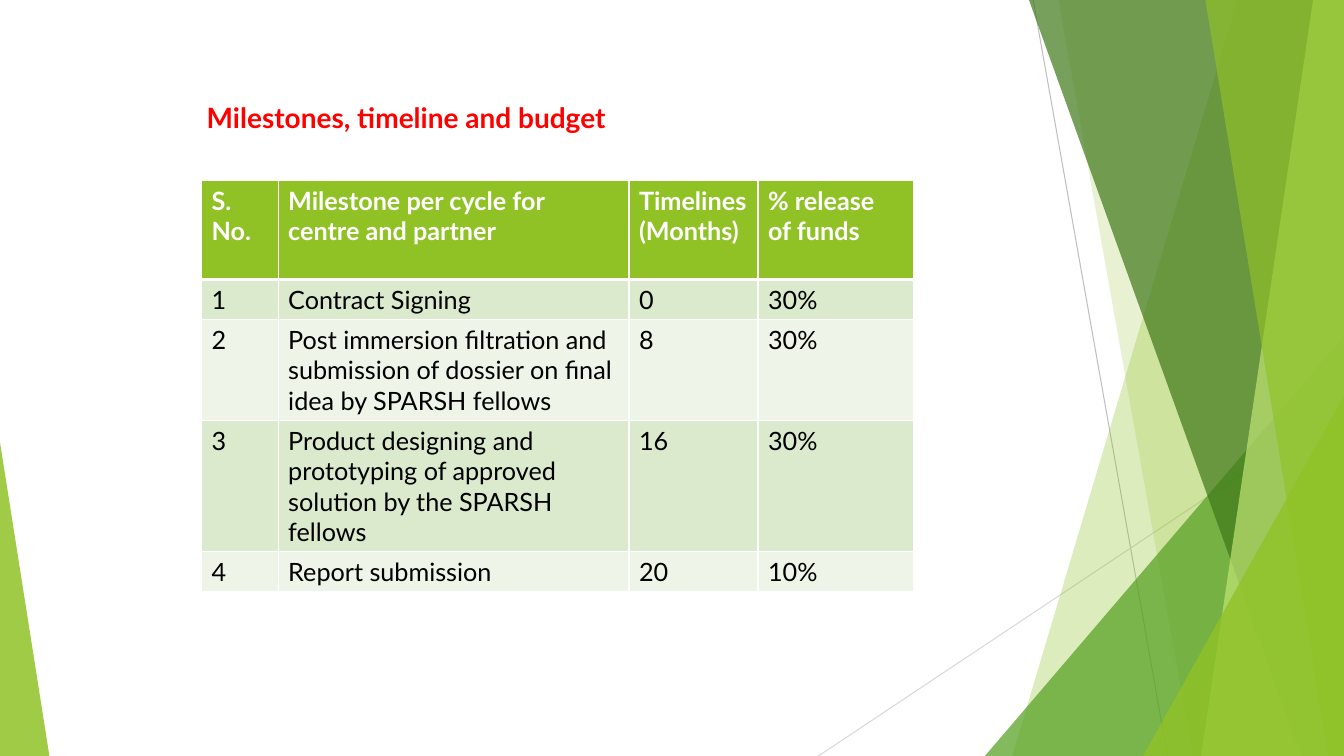
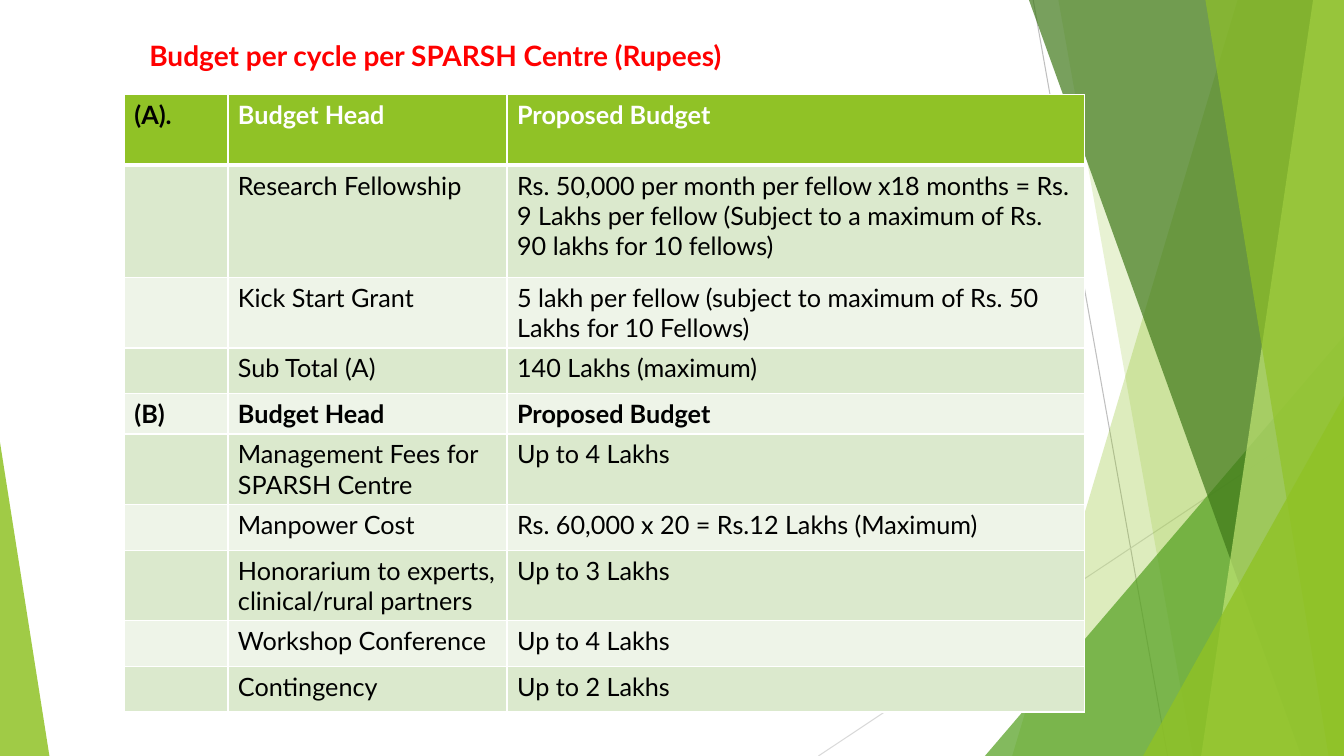
from dataclasses import dataclass

from lxml.etree import SubElement
from pptx import Presentation
from pptx.dml.color import RGBColor
from pptx.enum.shapes import MSO_CONNECTOR as Connector, MSO_SHAPE as Preset
from pptx.enum.text import MSO_ANCHOR as Anchor, MSO_AUTO_SIZE as AutoSize, PP_ALIGN as Align
from pptx.oxml.ns import qn
from pptx.util import Pt


@dataclass(frozen=True)
class Theme:
    font: str = "Lato"
    title_size: int = 20
    table_size: int = 18
    title: str = "FF0000"
    text: str = "000000"
    white: str = "FFFFFF"
    lime: str = "90C226"
    pale_lime: str = "C0E474"
    green: str = "54A021"
    dark_green: str = "3F7819"
    odd_row: str = "DBE9CD"
    even_row: str = "EEF4E8"
    steep_line: str = "BFBFBF"
    flat_line: str = "D9D9D9"


THEME = Theme()
WIDTH, HEIGHT = 960, 540
TITLE_HEIGHT = 31.7
BORDER, HEADER_BORDER = 1, 3
# Heights of table rows that hold one to four lines of text
ONE_LINE, TWO_LINES, THREE_LINES, FOUR_LINES = (7.2 + 21.6 * lines for lines in range(1, 5))
LOOSE_LINE = 32.6

MILESTONES = [
    ("S. No.", "Milestone per cycle for centre and partner", "Timelines (Months)", "% release of funds"),
    ("1", "Contract Signing", "0", "30%"),
    ("2", "Post immersion filtration and submission of dossier on final idea by SPARSH fellows", "8", "30%"),
    ("3", "Product designing and prototyping of approved solution by the SPARSH fellows", "16", "30%"),
    ("4", "Report submission", "20", "10%"),
]
BUDGET = [
    ("(A).", "Budget Head", "Proposed Budget"),
    ("", "Research Fellowship",
     "Rs. 50,000 per month per fellow x18 months = Rs. 9 Lakhs per fellow "
     "(Subject to a maximum of Rs. 90 lakhs for 10 fellows)"),
    ("", "Kick Start Grant", "5 lakh per fellow (subject to maximum of Rs. 50 Lakhs for 10 Fellows)"),
    ("", "Sub Total (A)", "140 Lakhs (maximum)"),
    ("(B)", "Budget Head", "Proposed Budget"),
    ("", "Management Fees for SPARSH Centre", "Up to 4 Lakhs"),
    ("", "Manpower Cost", "Rs. 60,000 x 20 = Rs.12 Lakhs (Maximum)"),
    ("", "Honorarium to experts, clinical/rural partners", "Up to 3 Lakhs"),
    ("", "Workshop Conference", "Up to 4 Lakhs"),
    ("", "Contingency", "Up to 2 Lakhs"),
]


def rgb(color):
    return RGBColor.from_string(color)


def format_text(text_frame, size, color, bold):
    for paragraph in text_frame.paragraphs:
        for run in paragraph.runs:
            run.font.name = THEME.font
            run.font.size = Pt(size)
            run.font.bold = bold
            run.font.color.rgb = rgb(color)


def fill_translucent(shape, color, opacity):
    shape.shadow.inherit = False
    shape.line.fill.background()
    shape.fill.solid()
    shape.fill.fore_color.rgb = rgb(color)
    color_element = shape.element.spPr.find(".//" + qn("a:srgbClr"))
    SubElement(color_element, qn("a:alpha"), val=str(opacity * 1000))


def add_line(shapes, start, end, color):
    ends = [Pt(length) for length in (*start, *end)]
    line = shapes.add_connector(Connector.STRAIGHT, *ends)
    line.line.color.rgb = rgb(color)
    line.line.width = Pt(0.75)
    SubElement(line.element.spPr, qn("a:effectLst"))


def add_wedge(shapes, top_left, bottom_left, color, opacity):
    """Add a full-height band with a slanted left edge, reaching the right of the slide."""
    builder = shapes.build_freeform(Pt(top_left), 0)
    corners = [(WIDTH, 0), (WIDTH, HEIGHT), (bottom_left, HEIGHT)]
    builder.add_line_segments([(Pt(x), Pt(y)) for x, y in corners], close=True)
    fill_translucent(builder.convert_to_shape(), color, opacity)


def add_corner(shapes, left, right, top, apex, color, opacity):
    """Add a triangle that stands on the slide's bottom edge."""
    corner = shapes.add_shape(Preset.ISOSCELES_TRIANGLE, Pt(left), Pt(top),
                              Pt(right - left), Pt(HEIGHT - top))
    corner.adjustments[0] = apex
    fill_translucent(corner, color, opacity)


def add_backdrop(slide):
    """Draw the facets once and move them to the layout that all slides use."""
    group = slide.shapes.add_group_shape()
    shapes = group.shapes
    add_line(shapes, (738, 0), (834, HEIGHT), THEME.steep_line)
    add_line(shapes, (WIDTH, 290), (584.6, HEIGHT), THEME.flat_line)
    add_wedge(shapes, 884, 723, THEME.lime, 30)
    add_wedge(shapes, 756, 852, THEME.lime, 20)
    add_corner(shapes, 703.5, WIDTH, 240, 1, THEME.green, 72)
    add_wedge(shapes, 735, 929.5, THEME.dark_green, 70)
    add_wedge(shapes, 938, 858, THEME.pale_lime, 70)
    add_wedge(shapes, 861, 949, THEME.lime, 65)
    add_corner(shapes, 816.5, WIDTH, 283, 1, THEME.lime, 80)
    add_corner(shapes, 0, 35.3, 316, 0, THEME.lime, 85)

    layout_tree = slide.slide_layout.shapes.element
    layout_tree.append(group.element)
    for number, properties in enumerate(layout_tree.iter(qn("p:cNvPr")), 1):
        properties.set("id", str(number))


def set_title(slide, text, left, top, width):
    title = slide.shapes.title
    title.left, title.top = Pt(left), Pt(top)
    title.width, title.height = Pt(width), Pt(TITLE_HEIGHT)
    text_frame = title.text_frame
    text_frame.text = text
    text_frame.word_wrap = True
    text_frame.auto_size = AutoSize.NONE
    text_frame.vertical_anchor = Anchor.MIDDLE
    text_frame.paragraphs[0].alignment = Align.LEFT
    format_text(text_frame, THEME.title_size, THEME.title, True)


def add_borders(cell_element, row):
    """Give a cell white borders, with a thick one under the header row."""
    properties = cell_element.get_or_add_tcPr()
    top = HEADER_BORDER if row == 1 else BORDER
    bottom = HEADER_BORDER if row == 0 else BORDER
    for side, width in (("L", BORDER), ("R", BORDER), ("T", top), ("B", bottom)):
        line = SubElement(properties, qn(f"a:ln{side}"), w=str(Pt(width)))
        SubElement(SubElement(line, qn("a:solidFill")), qn("a:srgbClr"), val=THEME.white)


def row_fill(row):
    if row == 0:
        return THEME.lime
    return THEME.odd_row if row % 2 else THEME.even_row


def add_table(slide, left, top, widths, heights, rows, bold_rows=(0,), first_white_column=0):
    frame = slide.shapes.add_table(len(rows), len(widths), Pt(left), Pt(top),
                                   Pt(sum(widths)), Pt(sum(heights)))
    table = frame.table
    table.horz_banding = False
    for column, width in zip(table.columns, widths):
        column.width = Pt(width)
    for table_row, height in zip(table.rows, heights):
        table_row.height = Pt(height)

    cell_elements = frame.element.iter(qn("a:tc"))
    for index, (cell, cell_element) in enumerate(zip(table.iter_cells(), cell_elements)):
        row, column = divmod(index, len(widths))
        add_borders(cell_element, row)
        cell.fill.solid()
        cell.fill.fore_color.rgb = rgb(row_fill(row))
        cell.text_frame.text = rows[row][column]
        is_white = row == 0 and column >= first_white_column
        format_text(cell.text_frame, THEME.table_size,
                    THEME.white if is_white else THEME.text, row in bold_rows)


def add_milestones_slide(slide):
    set_title(slide, "Milestones, timeline and budget", 140.4, 67.7, 323.3)
    add_table(slide, 144, 129, [54.7, 250.6, 92.2, 110.8],
              [70.6, ONE_LINE, THREE_LINES, FOUR_LINES, ONE_LINE], MILESTONES)


def add_budget_slide(slide):
    set_title(slide, "Budget per cycle per SPARSH Centre (Rupees)", 99.4, 23.8, 530.6)
    heights = [TWO_LINES, 80, TWO_LINES, LOOSE_LINE, ONE_LINE,
               TWO_LINES, LOOSE_LINE, TWO_LINES, LOOSE_LINE, LOOSE_LINE]
    add_table(slide, 88.8, 67.7, [74, 199.4, 412.6], heights, BUDGET,
              bold_rows=(0, 4), first_white_column=1)


def main():
    presentation = Presentation()
    presentation.slide_width, presentation.slide_height = Pt(WIDTH), Pt(HEIGHT)
    title_only = presentation.slide_layouts[5]
    milestones, budget = (presentation.slides.add_slide(title_only) for _ in range(2))
    add_backdrop(milestones)
    add_milestones_slide(milestones)
    add_budget_slide(budget)
    presentation.save("out.pptx")


if __name__ == "__main__":
    main()
